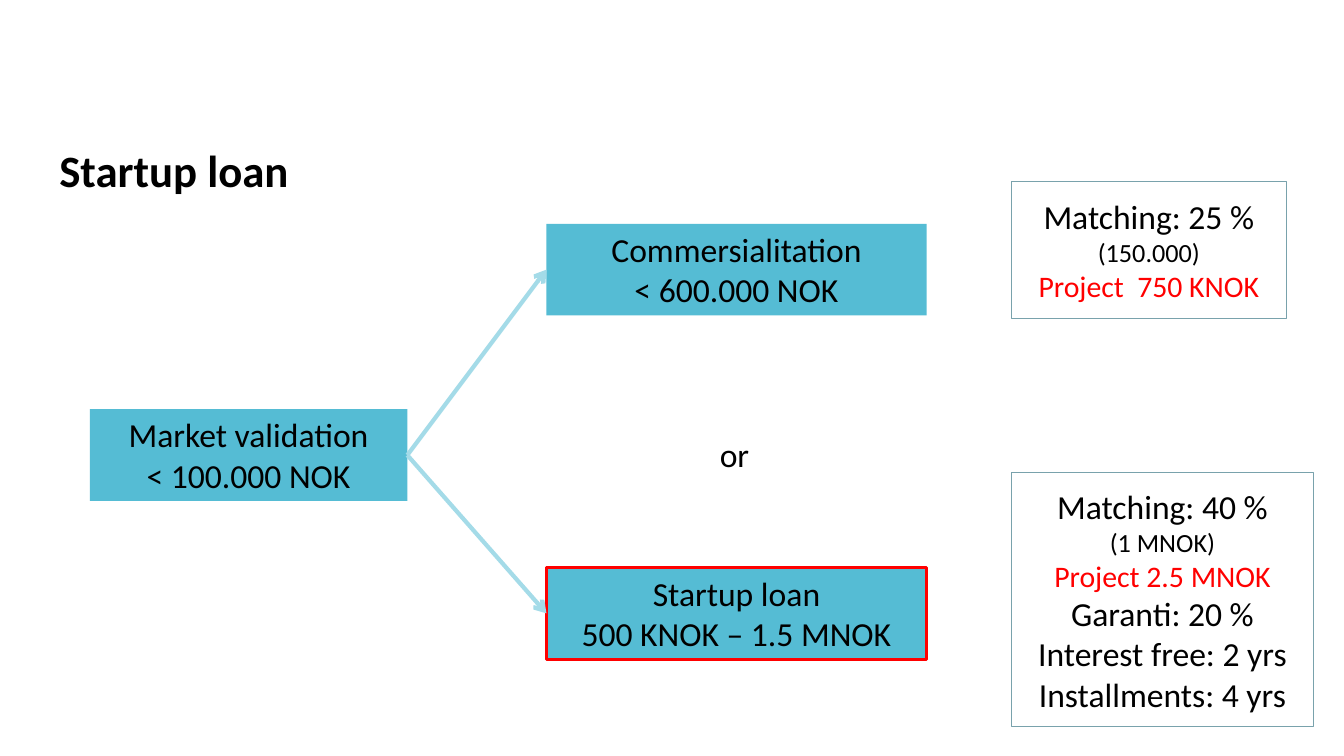
from lxml import etree
from pptx import Presentation
from pptx.dml.color import RGBColor
from pptx.enum.shapes import MSO_CONNECTOR, MSO_SHAPE
from pptx.enum.text import MSO_ANCHOR, MSO_AUTO_SIZE, PP_ALIGN
from pptx.oxml.ns import qn
from pptx.util import Inches, Pt

RECT = MSO_SHAPE.RECTANGLE
STRAIGHT = MSO_CONNECTOR.STRAIGHT
LEFT, CENTER = PP_ALIGN.LEFT, PP_ALIGN.CENTER
TOP, MIDDLE = MSO_ANCHOR.TOP, MSO_ANCHOR.MIDDLE
FIT, FIXED = MSO_AUTO_SIZE.SHAPE_TO_FIT_TEXT, MSO_AUTO_SIZE.NONE

BLACK = RGBColor(0x00, 0x00, 0x00)
RED = RGBColor(0xFF, 0x00, 0x00)
TEAL = RGBColor(0x55, 0xBC, 0xD4)
PALE_TEAL = RGBColor(0xA4, 0xDB, 0xE8)
GREY_TEAL = RGBColor(0x79, 0xA2, 0xAC)

prs = Presentation()
prs.slide_width, prs.slide_height = Inches(13.33), Inches(7.5)
s = prs.slides.add_slide(prs.slide_layouts[6])


def write(sp, paragraphs, align, anchor, fit, bold=False):
    tf = sp.text_frame
    tf.word_wrap = True
    tf.auto_size = fit
    tf.vertical_anchor = anchor
    for i, runs in enumerate(paragraphs):
        p = tf.paragraphs[0] if i == 0 else tf.add_paragraph()
        p.alignment = align
        for text, size, color in runs:
            r = p.add_run()
            r.text = text
            r.font.name = "Calibri"
            r.font.size = Pt(size)
            r.font.bold = bold
            r.font.color.rgb = color


def add_box(x, y, w, h, fill, line, line_width):
    sp = s.shapes.add_shape(RECT, Inches(x), Inches(y), Inches(w), Inches(h))
    sp.shadow.inherit = False
    for part, color in ((sp.fill, fill), (sp.line.fill, line)):
        if color is None:
            part.background()
        else:
            part.solid()
            part.fore_color.rgb = color
    if line is not None:
        sp.line.width = Pt(line_width)
    return sp


stages = []
for x, y, w, line, lines in (
    (0.89, 4.06, 3.15, None, ("Market validation", "< 100.000 NOK")),
    (5.42, 5.63, 3.77, RED, ("Startup loan", "500 KNOK – 1.5 MNOK")),
    (5.42, 2.22, 3.77, None, ("Commersialitation", "< 600.000 NOK")),
):
    sp = add_box(x, y, w, 0.91, TEAL, line, 2.25)
    write(sp, [[(text, 24, BLACK)] for text in lines], CENTER, TOP, FIT)
    stages.append(sp)

validation, startup_loan, commercialisation = stages
for target in (commercialisation, startup_loan):
    arrow = s.shapes.add_connector(STRAIGHT, 0, 0, 0, 0)
    arrow.begin_connect(validation, 3)
    arrow.end_connect(target, 1)
    arrow.line.color.rgb = PALE_TEAL
    arrow.line.width = Pt(3)
    etree.SubElement(arrow.line._get_or_add_ln(), qn("a:tailEnd"), type="arrow")
    etree.SubElement(arrow._element.spPr, qn("a:effectLst"))

for y, w, h, paragraphs in (
    (1.8, 2.73, 1.36, [
        [("Matching: 25 % ", 24, BLACK), ("(150.000)", 18.7, BLACK)],
        [("Project  750 KNOK", 21.3, RED)],
    ]),
    (4.69, 3, 2.52, [
        [("Matching: 40 %", 24, BLACK)],
        [("(1 MNOK)", 18.7, BLACK)],
        [("Project 2.5 MNOK", 21.3, RED)],
        [("Garanti: 20 %", 24, BLACK)],
        [("Interest free: 2 yrs", 24, BLACK)],
        [("Installments: 4 yrs", 24, BLACK)],
    ]),
):
    sp = add_box(10.03, y, w, h, None, GREY_TEAL, 1)
    write(sp, paragraphs, CENTER, MIDDLE, FIXED)

for x, y, w, h, text, size, bold in (
    (0.49, 1.37, 4.93, 0.64, "Startup loan", 32, True),
    (7.04, 4.26, 0.52, 0.5, "or", 24, False),
):
    sp = s.shapes.add_textbox(Inches(x), Inches(y), Inches(w), Inches(h))
    write(sp, [[(text, size, BLACK)]], LEFT, TOP, FIT, bold)

prs.save("out.pptx")
